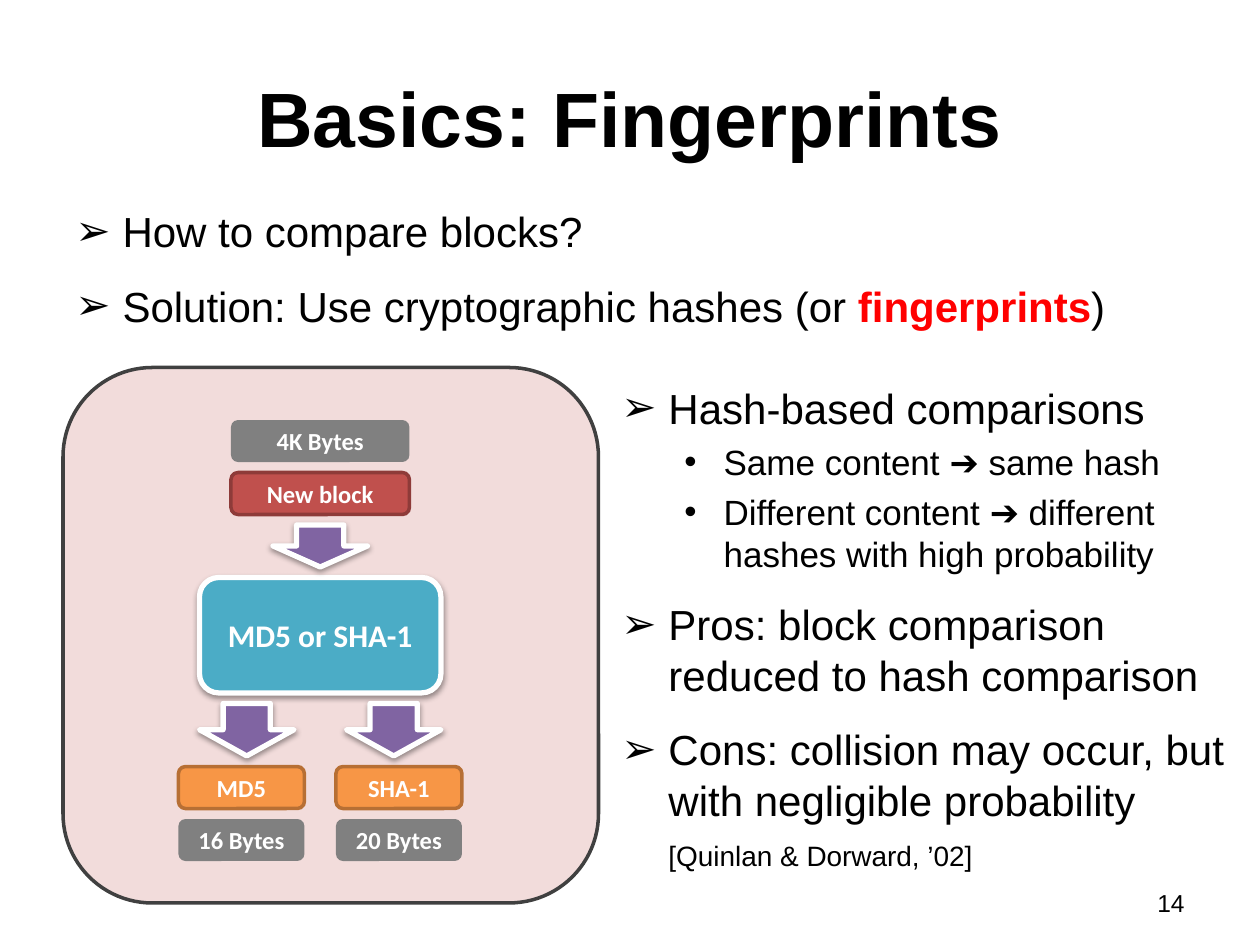
from dataclasses import dataclass
from typing import Optional

from lxml.etree import SubElement
from pptx import Presentation
from pptx.dml.color import RGBColor
from pptx.enum.shapes import MSO_SHAPE as SHAPE
from pptx.enum.text import MSO_ANCHOR as ANCHOR, PP_ALIGN as ALIGN
from pptx.oxml import parse_xml
from pptx.oxml.ns import nsdecls, qn
from pptx.util import Cm, Pt

BLACK = RGBColor(0x00, 0x00, 0x00)
WHITE = RGBColor(0xFF, 0xFF, 0xFF)
RED = RGBColor(0xFF, 0x00, 0x00)
PINK = RGBColor(0xF2, 0xDC, 0xDB)
DARK_GRAY = RGBColor(0x40, 0x40, 0x40)
GRAY = RGBColor(0x80, 0x80, 0x80)
BRICK = RGBColor(0xC0, 0x50, 0x4D)
DARK_BRICK = RGBColor(0x8E, 0x3B, 0x39)
TEAL = RGBColor(0x4B, 0xAC, 0xC6)
PURPLE = RGBColor(0x80, 0x64, 0xA2)
ORANGE = RGBColor(0xF7, 0x96, 0x46)
DARK_ORANGE = RGBColor(0xB7, 0x6F, 0x34)

SHADOW = (f'<a:effectLst {nsdecls("a")}><a:outerShdw blurRad="40000" dist="20000" '
          'dir="5400000" rotWithShape="0"><a:srgbClr val="000000">'
          '<a:alpha val="38000"/></a:srgbClr></a:outerShdw></a:effectLst>')


@dataclass
class Block:
    """A diagram shape; its box is in grid units."""
    box: tuple
    fill: RGBColor
    text: str = ""
    line: Optional[RGBColor] = None
    width: float = 2
    size: int = 14
    kind: int = SHAPE.ROUNDED_RECTANGLE
    shadow: bool = False


@dataclass
class Level:
    """Bullet paragraph format; lengths in cm, space in points."""
    bullet: str
    margin: float
    hanging: float
    size: int
    space: float


@dataclass
class Span:
    text: str
    style: dict


MAIN = Level("➢", 0.95, 0.95, 24, 13.8)
SUB = Level("•", 2.06, 0.79, 20, 4.6)


def grid(*units: float) -> list:
    """Turn grid units of a twelfth of an inch into lengths."""
    return [Cm(2.54 * u / 12) for u in units]


def add_run(p, text: str, **style) -> None:
    r = p.add_run()
    r.text = text
    style = {"name": "Arial", "size": 24, "bold": False, "color": BLACK, **style}
    r.font.color.rgb = style.pop("color")
    style["size"] = Pt(style["size"])
    for key, value in style.items():
        setattr(r.font, key, value)


def add_block(slide, block: Block) -> None:
    s = slide.shapes.add_shape(block.kind, *grid(*block.box))
    s.fill.solid()
    s.fill.fore_color.rgb = block.fill
    if block.line is None:
        s.line.fill.background()
    else:
        s.line.color.rgb = block.line
        s.line.width = Pt(block.width)
    if block.shadow:
        s._element.spPr.append(parse_xml(SHADOW))
    else:
        s.shadow.inherit = False
    if block.text:
        tf = s.text_frame
        tf.vertical_anchor = ANCHOR.MIDDLE
        p = tf.paragraphs[0]
        p.alignment = ALIGN.CENTER
        add_run(p, block.text, name="Calibri", size=block.size, bold=True, color=WHITE)


def add_textbox(slide, box: tuple):
    tf = slide.shapes.add_textbox(*grid(*box)).text_frame
    tf.word_wrap = True
    return tf


def add_bullets(slide, box: tuple, items: list) -> None:
    tf = add_textbox(slide, box)
    for i, (level, spans) in enumerate(items):
        p = tf.add_paragraph() if i else tf.paragraphs[0]
        p.level = int(level is SUB)
        p.space_before = Pt(level.space if i else 0)
        pPr = p._p.get_or_add_pPr()
        pPr.set("marL", str(Cm(level.margin)))
        pPr.set("indent", str(-Cm(level.hanging)))
        SubElement(pPr, qn("a:buFont"), typeface="Arial")
        SubElement(pPr, qn("a:buChar"), char=level.bullet)
        for span in spans:
            add_run(p, span.text, **{"size": level.size, **span.style})


def arrow(*box: float) -> Block:
    return Block(box, PURPLE, line=WHITE, width=3, kind=SHAPE.DOWN_ARROW, shadow=True)


BLOCKS = [
    Block((6, 35, 51, 51), PINK, line=DARK_GRAY),
    Block((22, 40, 17, 4), GRAY, "4K Bytes"),
    Block((22, 45, 17, 4), BRICK, "New block", DARK_BRICK),
    Block((19, 55, 23, 11), TEAL, "MD5 or SHA-1", WHITE, 3, 18, shadow=True),
    arrow(26, 50, 9, 4),
    arrow(19, 67, 9, 5),
    arrow(33, 67, 9, 5),
]
# Hash outputs, each with its length underneath
for x, name, length in ((17, "MD5", "16 Bytes"), (32, "SHA-1", "20 Bytes")):
    BLOCKS += [Block((x, 73, 12, 4), ORANGE, name, DARK_ORANGE),
               Block((x, 78, 12, 4), GRAY, length)]

INTRO = [
    (MAIN, [Span("How to compare blocks?", {})]),
    (MAIN, [Span("Solution: Use cryptographic hashes (or ", {}),
            Span("fingerprints", {"color": RED, "bold": True}),
            Span(")", {})]),
]
COMPARISON = [
    (MAIN, [Span("Hash-based comparisons", {})]),
    (SUB, [Span("Same content ➔ same hash", {})]),
    (SUB, [Span("Different content ➔ different hashes with high probability", {})]),
    (MAIN, [Span("Pros: block comparison reduced to hash comparison", {})]),
    (MAIN, [Span("Cons: collision may occur, but with negligible probability ", {}),
            Span("[Quinlan & Dorward, ’02]", {"size": 16}),
            Span(" ", {})]),
]


def main() -> None:
    prs = Presentation()
    prs.slide_width, prs.slide_height = Cm(25.4), Cm(19.05)
    slide = prs.slides.add_slide(prs.slide_layouts[5])

    # Title
    title = slide.shapes.title
    title.left, title.top, title.width, title.height = grid(6, 3.6, 108, 15)
    title.text_frame.vertical_anchor = ANCHOR.MIDDLE
    p = title.text_frame.paragraphs[0]
    p.alignment = ALIGN.CENTER
    add_run(p, "Basics: Fingerprints", size=44, bold=True)

    # Introduction and slide number
    add_bullets(slide, (6, 19, 104, 12), INTRO)
    p = add_textbox(slide, (86, 84, 28, 4.2)).paragraphs[0]
    p.alignment = ALIGN.RIGHT
    add_run(p, "14", size=14)

    # Hashing diagram
    for block in BLOCKS:
        add_block(slide, block)

    # Comparison notes
    add_bullets(slide, (58, 35.8, 61, 53.3), COMPARISON)
    prs.save("out.pptx")


if __name__ == "__main__":
    main()
